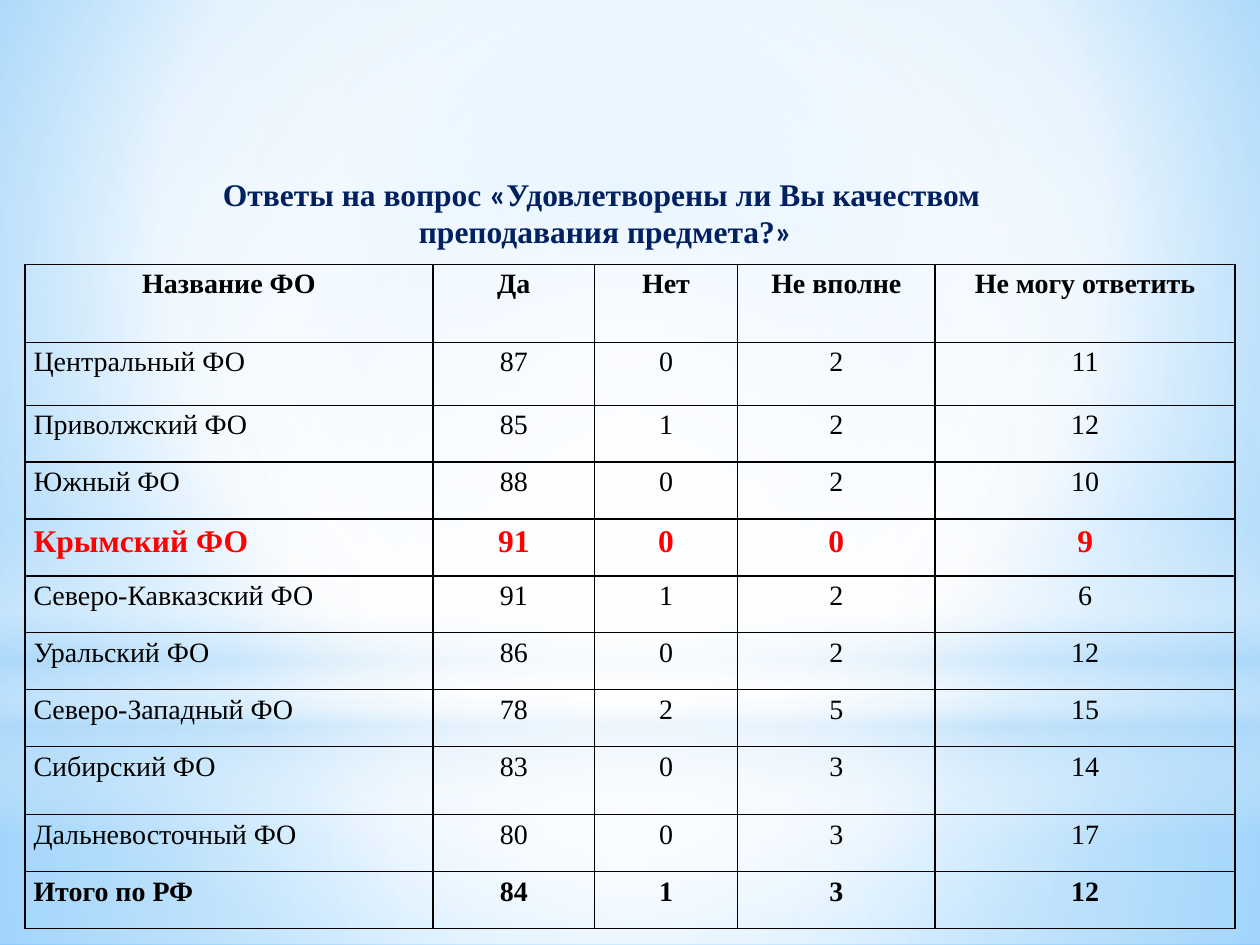
import pptx
import pptx.dml.color
import pptx.enum.shapes
import pptx.enum.text
import pptx.oxml
import pptx.oxml.ns
import pptx.util

Pt = pptx.util.Pt
RGBColor = pptx.dml.color.RGBColor
ALIGN = pptx.enum.text.PP_ALIGN
SHAPE = pptx.enum.shapes.MSO_SHAPE
qn = pptx.oxml.ns.qn

SLIDE_W, SLIDE_H = 720, 540
NAVY = RGBColor(0x00, 0x20, 0x60)
BLACK = RGBColor(0x00, 0x00, 0x00)
RED = RGBColor(0xFF, 0x00, 0x00)
WHITE = RGBColor(0xFF, 0xFF, 0xFF)
PALE_BLUE = RGBColor(0xB4, 0xDC, 0xFA)
LIGHT_BLUE = RGBColor(0x9E, 0xD5, 0xFF)
SKY_BLUE = RGBColor(0x5B, 0xB9, 0xFF)
SERIF, SANS = "Times New Roman", "Calibri"

CENTRE = (50, 50, 50, 50)

# Each glow: shape, box, gradient stops (position, colour, opacity), focus
GLOWS = [
    (SHAPE.RECTANGLE, (0, 402, 720, 138),
     [(0, WHITE, 91), (37, WHITE, 76), (100, PALE_BLUE, 79)], CENTRE),
    (SHAPE.RECTANGLE, (0, 0, 720, 402),
     [(0, WHITE, 89), (48, WHITE, 62), (100, PALE_BLUE, 79)], CENTRE),
    (SHAPE.RECTANGLE, (0, 297, 720, 180),
     [(0, WHITE, 0), (29, WHITE, 30), (45, PALE_BLUE, 40),
      (55, WHITE, 26), (65, PALE_BLUE, 60), (100, WHITE, 0)], None),
    (SHAPE.OVAL, (0, 126, 720, 402),
     [(0, WHITE, 100), (56, WHITE, 0)], CENTRE),
]

TITLE_LINES = [
    [("Ответы на вопрос ", SERIF), ("«", SANS),
     ("Удовлетворены ли Вы качеством ", SERIF)],
    [("преподавания предмета?", SERIF), ("»", SANS)],
]

HEADER = ("Название ФО", "Да", "Нет", "Не вполне", "Не могу ответить")
HIGHLIGHT, TOTAL = "Крымский ФО", "Итого по РФ"
ANSWERS = [
    HEADER,
    ("Центральный ФО", 87, 0, 2, 11),
    ("Приволжский ФО", 85, 1, 2, 12),
    ("Южный ФО", 88, 0, 2, 10),
    (HIGHLIGHT, 91, 0, 0, 9),
    ("Северо-Кавказский ФО", 91, 1, 2, 6),
    ("Уральский ФО", 86, 0, 2, 12),
    ("Северо-Западный ФО", 78, 2, 5, 15),
    ("Сибирский ФО", 83, 0, 3, 14),
    ("Дальневосточный ФО", 80, 0, 3, 17),
    (TOTAL, 84, 1, 3, 12),
]
COLUMN_WIDTHS = (233.3, 92.2, 81.8, 112.9, 171.5)
ROW_HEIGHT = 32.5
SPECIAL_HEIGHTS = {0: 44.6, 1: 36, 8: 39}


def apply_gradient(properties, stops, focus):
    """Replace a solid fill by a radial gradient, or a vertical one without focus."""
    stop_xml = "".join(
        f'<a:gs pos="{position * 1000}"><a:srgbClr val="{colour}">'
        f'<a:alpha val="{opacity * 1000}"/></a:srgbClr></a:gs>'
        for position, colour, opacity in stops)
    if focus:
        left, top, right, bottom = (edge * 1000 for edge in focus)
        direction = (f'<a:path path="circle"><a:fillToRect l="{left}" t="{top}" '
                     f'r="{right}" b="{bottom}"/></a:path>')
    else:
        direction = '<a:lin ang="5400000" scaled="0"/>'
    gradient = pptx.oxml.parse_xml(
        f'<a:gradFill {pptx.oxml.ns.nsdecls("a")} rotWithShape="1">'
        f'<a:gsLst>{stop_xml}</a:gsLst>{direction}</a:gradFill>')
    properties.replace(properties.find(qn("a:solidFill")), gradient)


def add_backdrop(slide):
    # Sky gradient
    slide.background.fill.solid()
    apply_gradient(slide.element.find(".//" + qn("p:bgPr")),
                   [(0, LIGHT_BLUE, 100), (60, WHITE, 100), (100, SKY_BLUE, 100)],
                   (20, 10, 20, 60))
    # Translucent glows
    for outline, box, stops, focus in GLOWS:
        glow = slide.shapes.add_shape(outline, *map(Pt, box))
        glow.shadow.inherit = False
        glow.line.fill.background()
        glow.fill.solid()
        apply_gradient(glow.element.spPr, stops, focus)


def place_title(slide, left, top, width, height):
    title = slide.shapes.title
    slide.shapes.element.append(title.element)  # bring in front of the glows
    title.left, title.top = Pt(left), Pt(top)
    title.width, title.height = Pt(width), Pt(height)
    frame = title.text_frame
    frame.word_wrap = True
    frame.auto_size = pptx.enum.text.MSO_AUTO_SIZE.SHAPE_TO_FIT_TEXT
    frame.vertical_anchor = pptx.enum.text.MSO_ANCHOR.MIDDLE
    for index, line in enumerate(TITLE_LINES):
        paragraph = frame.add_paragraph() if index else frame.paragraphs[0]
        paragraph.alignment = ALIGN.CENTER
        paragraph.font.size = Pt(18)
        paragraph.font.bold = True
        paragraph.font.color.rgb = NAVY
        for text, font_name in line:
            run = paragraph.add_run()
            run.text = text
            run.font.name = font_name


def add_borders(cell):
    cell_properties = cell._tc.get_or_add_tcPr()
    for index, side in enumerate(("lnL", "lnR", "lnT", "lnB")):
        cell_properties.insert(index, pptx.oxml.parse_xml(
            f'<a:{side} {pptx.oxml.ns.nsdecls("a")} w="12700"><a:solidFill>'
            f'<a:srgbClr val="{BLACK}"/></a:solidFill></a:{side}>'))


def fill_cell(cell, value, alignment, size, colour, bold):
    cell.margin_left = cell.margin_right = Pt(5)
    cell.margin_top = cell.margin_bottom = 0
    cell.fill.background()
    add_borders(cell)
    cell.text = str(value)
    paragraph = cell.text_frame.paragraphs[0]
    paragraph.alignment = alignment
    paragraph.line_spacing = 1.15
    paragraph.font.name = SERIF
    paragraph.font.size = Pt(size)
    paragraph.font.color.rgb = colour
    paragraph.font.bold = bold


def add_answers(slide, left, top, width, height):
    table = slide.shapes.add_table(len(ANSWERS), len(HEADER), Pt(left), Pt(top),
                                   Pt(width), Pt(height)).table
    table.horz_banding = table.first_row = False
    for column, column_width in zip(table.columns, COLUMN_WIDTHS):
        column.width = Pt(column_width)
    for row_index, record in enumerate(ANSWERS):
        row = table.rows[row_index]
        row.height = Pt(SPECIAL_HEIGHTS.get(row_index, ROW_HEIGHT))
        region = record[0]
        size, colour = (18, RED) if region == HIGHLIGHT else (16, BLACK)
        bold = region in (HEADER[0], HIGHLIGHT, TOTAL)
        for column_index, value in enumerate(record):
            is_region = row_index > 0 and column_index == 0
            alignment = ALIGN.JUSTIFY if is_region else ALIGN.CENTER
            fill_cell(row.cells[column_index], value, alignment, size, colour, bold)


def main():
    presentation = pptx.Presentation()
    presentation.slide_width, presentation.slide_height = Pt(SLIDE_W), Pt(SLIDE_H)
    title_only = presentation.slide_layouts[5]
    slide = presentation.slides.add_slide(title_only)
    add_backdrop(slide)
    add_answers(slide, 14.2, 151, sum(COLUMN_WIDTHS), 380)
    place_title(slide, 42.5, 95.8, 607, 51)
    presentation.save("out.pptx")


if __name__ == "__main__":
    main()
